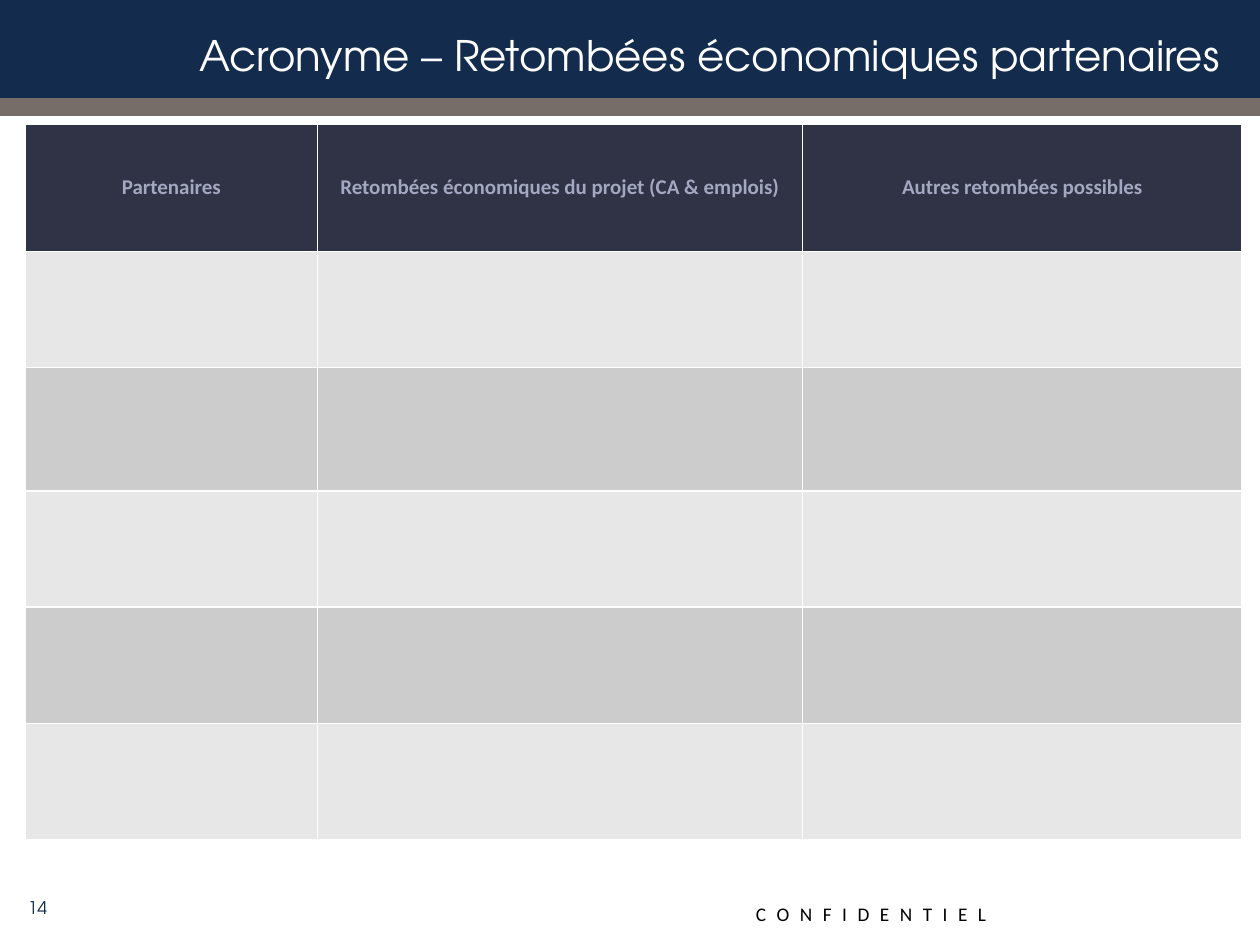
from typing import NamedTuple

from lxml.etree import SubElement as Sub
from pptx import Presentation
from pptx.dml.color import RGBColor
from pptx.enum.shapes import MSO_SHAPE as Shape
from pptx.enum.text import MSO_ANCHOR as Anchor, MSO_AUTO_SIZE as Fit, PP_ALIGN as Align
from pptx.oxml.ns import qn
from pptx.util import Cm, Pt

NAVY = RGBColor(0x13, 0x2C, 0x4D)
TAUPE = RGBColor(0x76, 0x6C, 0x68)
INK = RGBColor(0x30, 0x33, 0x46)
LILAC = RGBColor(0xA3, 0xA7, 0xC0)
LIGHT = RGBColor(0xE7, 0xE7, 0xE7)
GREY = RGBColor(0xCC, 0xCC, 0xCC)
WHITE = RGBColor(0xFF, 0xFF, 0xFF)
BLACK = RGBColor(0, 0, 0)

SANS = "Calibri"
GEO = "TeX Gyre Adventor"


class Bar(NamedTuple):
    top: float
    height: float
    color: RGBColor


class Style(NamedTuple):
    face: str
    size: int
    color: RGBColor
    align: Align
    bold: bool = False


class Column(NamedTuple):
    head: str
    width: float


BARS = [Bar(0, 2.29, NAVY), Bar(1.98, 0.36, TAUPE)]
COLUMNS = [
    Column("Partenaires", 5.89),
    Column("Retombées économiques du projet (CA & emplois)", 9.78),
    Column("Autres retombées possibles", 8.86),
]
ROWS = [2.57, 2.34, 2.49, 2.34, 2.34, 2.34]


def write(frame, text: str, style: Style):
    line = frame.paragraphs[0]
    line.text = text
    line.alignment = style.align
    font = line.font
    font.name, font.size, font.bold = style.face, Pt(style.size), style.bold
    font.color.rgb = style.color
    return line


def draw_bar(slide, bar: Bar) -> None:
    shape = slide.shapes.add_shape(
        Shape.RECTANGLE, 0, Cm(bar.top), Cm(25.4), Cm(bar.height))
    shape.shadow.inherit = False
    shape.fill.solid()
    shape.fill.fore_color.rgb = bar.color
    shape.line.fill.background()


def draw_title(slide) -> None:
    title = slide.shapes.title
    title.left, title.top = Cm(0.38), Cm(0.36)
    title.width, title.height = Cm(24.46), Cm(1.47)
    frame = title.text_frame
    frame.auto_size = Fit.NONE
    frame.vertical_anchor = Anchor.MIDDLE
    write(frame, "Acronyme – Retombées économiques partenaires",
          Style(GEO, 24, WHITE, Align.RIGHT))
    title.element.getparent().append(title.element)


def draw_foot(slide) -> None:
    frame = slide.shapes.add_textbox(
        Cm(14.99), Cm(18.06), Cm(5.41), Cm(0.74)).text_frame
    frame.word_wrap = False
    frame.auto_size = Fit.SHAPE_TO_FIT_TEXT
    line = write(frame, "CONFIDENTIEL", Style(SANS, 11, BLACK, Align.LEFT))
    line.runs[0].font._element.set("spc", "600")

    frame = slide.shapes.add_textbox(
        Cm(-0.1), Cm(17.78), Cm(1.3), Cm(1.02)).text_frame
    frame.word_wrap = True
    frame.vertical_anchor = Anchor.MIDDLE
    write(frame, "14", Style(GEO, 10, NAVY, Align.RIGHT))


def paint(cell, color: RGBColor) -> None:
    props = cell._tc.get_or_add_tcPr()
    for side in ("lnL", "lnR", "lnT", "lnB"):
        edge = Sub(props, qn(f"a:{side}"), w=str(Pt(1)))
        Sub(Sub(edge, qn("a:solidFill")), qn("a:srgbClr"), val=str(WHITE))
    cell.fill.solid()
    cell.fill.fore_color.rgb = color


def draw_table(slide) -> None:
    table = slide.shapes.add_table(
        len(ROWS), len(COLUMNS), Cm(0.51), Cm(2.5),
        Cm(sum(col.width for col in COLUMNS)), Cm(sum(ROWS))).table
    for row, height in zip(table.rows, ROWS):
        row.height = Cm(height)
    style = Style(SANS, 12, LILAC, Align.CENTER, True)
    for x, col in enumerate(COLUMNS):
        table.columns[x].width = Cm(col.width)
        head = table.cell(0, x)
        head.vertical_anchor = Anchor.MIDDLE
        write(head.text_frame, col.head, style)
        paint(head, INK)
        for y in range(1, len(ROWS)):
            paint(table.cell(y, x), LIGHT if y % 2 else GREY)


def main() -> None:
    deck = Presentation()
    deck.slide_width, deck.slide_height = Cm(25.4), Cm(19.05)
    slide = deck.slides.add_slide(deck.slide_layouts[5])
    for bar in BARS:
        draw_bar(slide, bar)
    draw_foot(slide)
    draw_title(slide)
    draw_table(slide)
    deck.save("out.pptx")


if __name__ == "__main__":
    main()
